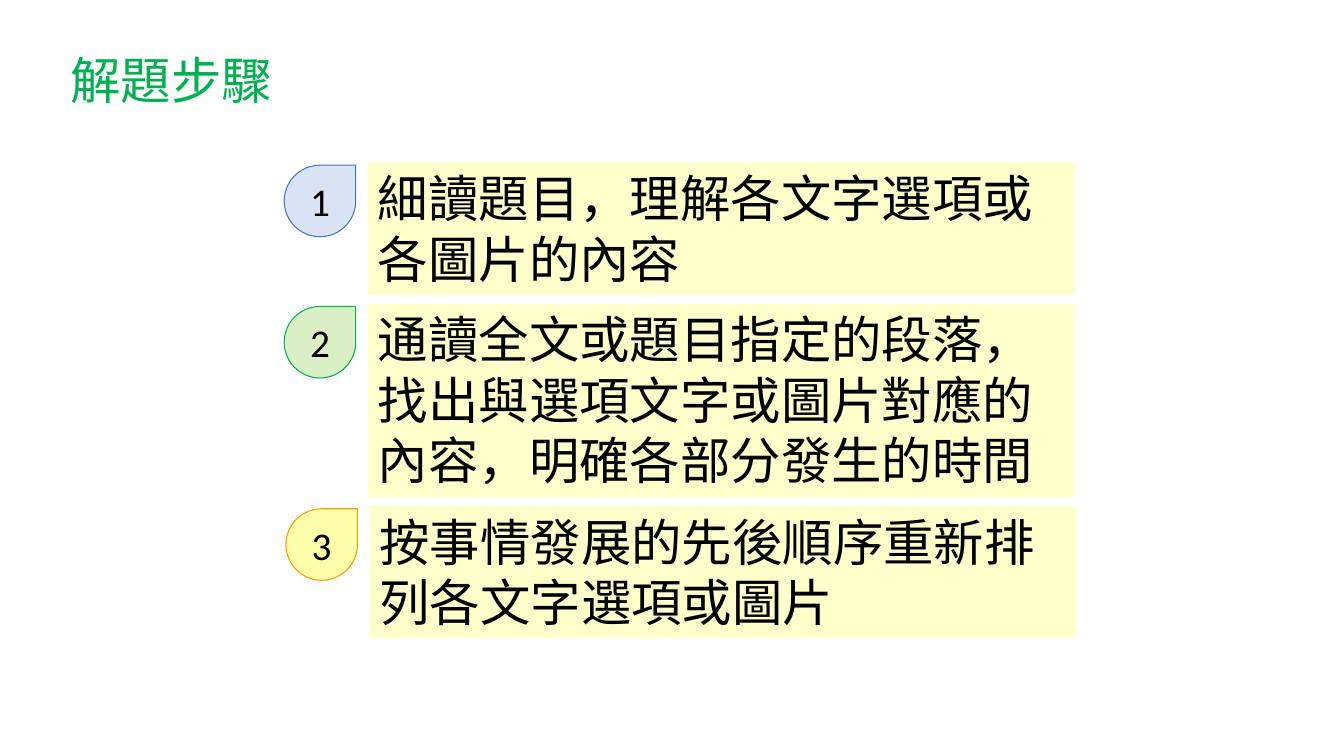
from lxml import etree
from pptx import Presentation
from pptx.dml.color import RGBColor
from pptx.enum.shapes import MSO_SHAPE
from pptx.enum.text import MSO_ANCHOR, MSO_AUTO_SIZE, PP_ALIGN
from pptx.oxml.ns import qn
from pptx.util import Pt

RECTANGLE, TEARDROP = MSO_SHAPE.RECTANGLE, MSO_SHAPE.TEAR
TOP, MIDDLE = MSO_ANCHOR.TOP, MSO_ANCHOR.MIDDLE
LEFT, CENTER = PP_ALIGN.LEFT, PP_ALIGN.CENTER
NO_AUTOFIT = MSO_AUTO_SIZE.NONE

BLACK = RGBColor(0x00, 0x00, 0x00)
CREAM = RGBColor(0xFF, 0xFF, 0xCC)
PALE_BLUE = RGBColor(0x8F, 0xAA, 0xDC)
BLUE = RGBColor(0x44, 0x72, 0xC4)
LIME = RGBColor(0x92, 0xD0, 0x50)
GREEN = RGBColor(0x00, 0xB0, 0x50)
YELLOW = RGBColor(0xFF, 0xFF, 0x00)
ORANGE = RGBColor(0xFF, 0x99, 0x00)

TITLE_FONT, BODY_FONT = "Noto Sans CJK SC", "Calibri"

# Text, number of lines, shift to the right, marker fill, marker line
STEPS = [
    ("細讀題目，理解各文字選項或各圖片的內容", 2, 0, PALE_BLUE, BLUE),
    ("通讀全文或題目指定的段落，找出與選項文字或圖片對應的內容，明確各部分發生的時間",
     3, 0, LIME, GREEN),
    ("按事情發展的先後順序重新排列各文字選項或圖片", 2, 1.2, YELLOW, ORANGE),
]
STEP_LEFT, STEP_TOP, STEP_WIDTH = 262.8, 116, 504.7
STEP_GAP, LINE_HEIGHT, INSETS = 6.5, 43.6, 7.2
MARKER_LEFT, MARKER_SIZE, MARKER_DROP = 203, 51.1, 2


def set_text(sp, text, size=36, font=BODY_FONT, color=BLACK, align=LEFT,
             anchor=TOP, wrap=True):
    tf = sp.text_frame
    tf.word_wrap = wrap
    tf.auto_size = NO_AUTOFIT
    tf.vertical_anchor = anchor
    p = tf.paragraphs[0]
    p.alignment = align
    r = p.add_run()
    r.text = text
    r.font.size = Pt(size)
    r.font.color.rgb = color
    r.font.name = font
    east_asian = etree.SubElement(r.font._element, qn("a:ea"))
    east_asian.set("typeface", font)


def add_filled_shape(s, kind, left, top, width, height, fill, opacity=100, line=None):
    sp = s.shapes.add_shape(kind, Pt(left), Pt(top), Pt(width), Pt(height))
    sp.shadow.inherit = False
    sp.fill.solid()
    sp.fill.fore_color.rgb = fill
    if opacity < 100:
        color = sp._element.spPr.find(qn("a:solidFill"))[0]
        etree.SubElement(color, qn("a:alpha")).set("val", str(opacity * 1000))
    if line is None:
        sp.line.fill.background()
    else:
        sp.line.color.rgb = line
        sp.line.width = Pt(0.75)
    return sp


def add_title(s, text):
    sp = s.shapes.title
    sp.left, sp.top, sp.width, sp.height = Pt(43.2), Pt(31.7), Pt(160), Pt(51.1)
    set_text(sp, text, font=TITLE_FONT, color=GREEN, wrap=False)


def add_step(s, number, top, height, text, shift, fill, line):
    box = add_filled_shape(s, RECTANGLE, STEP_LEFT + shift, top, STEP_WIDTH, height, CREAM)
    set_text(box, text)
    marker = add_filled_shape(s, TEARDROP, MARKER_LEFT + shift, top + MARKER_DROP,
                              MARKER_SIZE, MARKER_SIZE, fill, opacity=33, line=line)
    set_text(marker, str(number), size=28, align=CENTER, anchor=MIDDLE)


def main():
    prs = Presentation()
    prs.slide_width, prs.slide_height = Pt(960), Pt(540)
    s = prs.slides.add_slide(prs.slide_layouts[5])
    add_title(s, "解題步驟")
    top = STEP_TOP
    for number, (text, lines, shift, fill, line) in enumerate(STEPS, 1):
        height = lines * LINE_HEIGHT + INSETS
        add_step(s, number, top, height, text, shift, fill, line)
        top += height + STEP_GAP
    prs.save("out.pptx")


if __name__ == "__main__":
    main()
